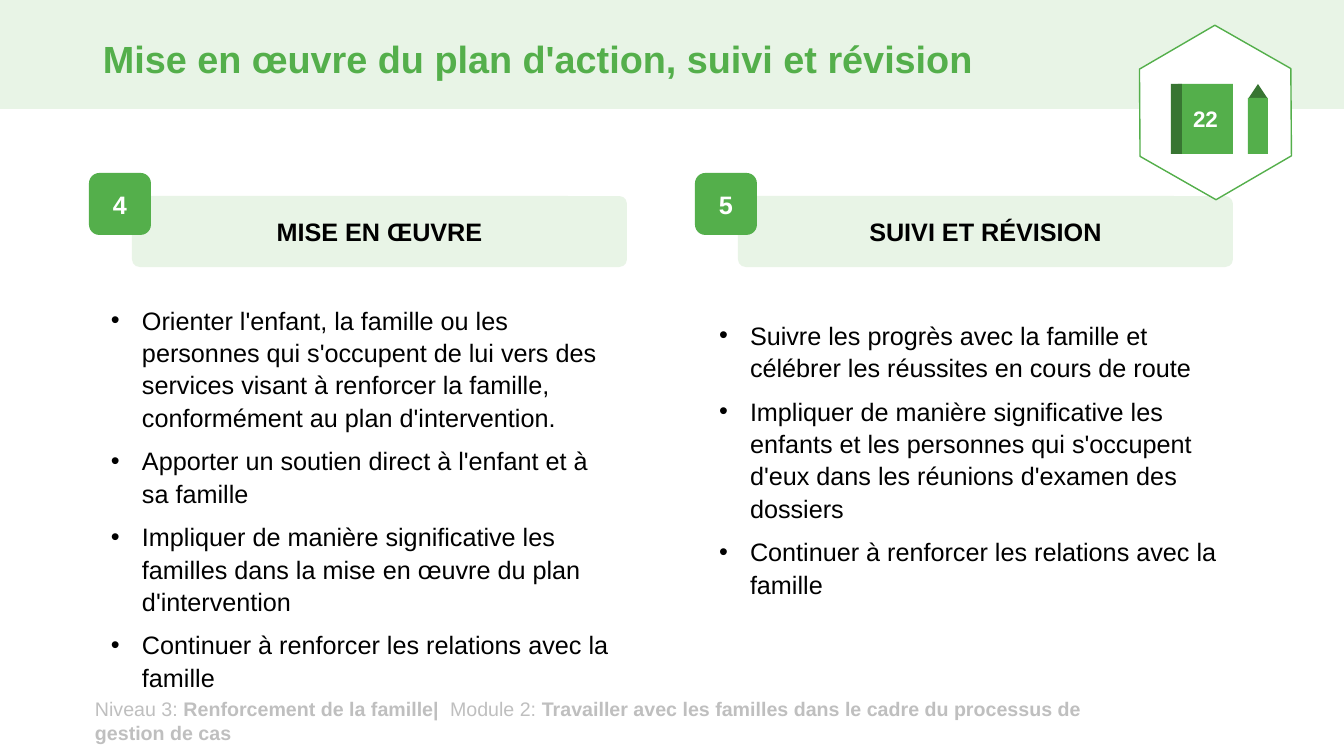
from dataclasses import dataclass

from pptx import Presentation
from pptx.dml.color import RGBColor
from pptx.enum.shapes import MSO_SHAPE
from pptx.enum.text import MSO_ANCHOR, MSO_AUTO_SIZE, PP_ALIGN
from pptx.shapes.autoshape import Shape
from pptx.slide import Slide
from pptx.text.text import TextFrame, _Paragraph
from pptx.util import Emu, Pt

EMU_PER_PX = 914400 / 100.8


@dataclass(frozen=True)
class Theme:
    font: str = "Arial"
    green: str = "54AF4B"
    dark_green: str = "387532"
    pale_green: str = "E8F4E6"
    white: str = "FFFFFF"
    black: str = "000000"
    grey: str = "BFBFBF"
    title_pt: int = 27
    text_pt: int = 18
    page_pt: int = 16
    footer_pt: int = 14


@dataclass(frozen=True)
class Box:
    left: int
    top: int
    width: int
    height: int


@dataclass(frozen=True)
class Step:
    number: str
    heading: str
    left: int
    body: Box
    points: tuple[str, ...]


@dataclass(frozen=True)
class IconPart:
    kind: MSO_SHAPE
    box: Box
    fill: str
    label: str = ""


THEME = Theme()
TITLE = "Mise en œuvre du plan d'action, suivi et révision"
FOOTER = (
    ("Niveau 3: ", False),
    ("Renforcement de la famille|  ", True),
    ("Module 2: ", False),
    ("Travailler avec les familles dans le cadre du processus de gestion de cas", True),
)
STEPS = (
    Step("4", "MISE EN ŒUVRE", 89, Box(101, 298, 525, 336), (
        "Orienter l'enfant, la famille ou les personnes qui s'occupent de lui vers des "
        "services visant à renforcer la famille, conformément au plan d'intervention.",
        "Apporter un soutien direct à l'enfant et à sa famille",
        "Impliquer de manière significative les familles dans la mise en œuvre du plan "
        "d'intervention",
        "Continuer à renforcer les relations avec la famille",
    )),
    Step("5", "SUIVI ET RÉVISION", 695, Box(709, 313, 525, 227), (
        "Suivre les progrès avec la famille et célébrer les réussites en cours de route",
        "Impliquer de manière significative les enfants et les personnes qui s'occupent "
        "d'eux dans les réunions d'examen des dossiers",
        "Continuer à renforcer les relations avec la famille",
    )),
)
NOTEBOOK_ICON = (
    IconPart(MSO_SHAPE.RECTANGLE, Box(1178, 84, 55, 70), THEME.green, "22"),
    IconPart(MSO_SHAPE.RECTANGLE, Box(1171, 84, 11, 70), THEME.dark_green),
    IconPart(MSO_SHAPE.ISOSCELES_TRIANGLE, Box(1248, 84, 20, 15), THEME.dark_green),
    IconPart(MSO_SHAPE.RECTANGLE, Box(1248, 98, 20, 56), THEME.green),
)


def px(value: int) -> Emu:
    return Emu(round(value * EMU_PER_PX))


def place(sp: Shape, box: Box) -> None:
    sp.left, sp.top = px(box.left), px(box.top)
    sp.width, sp.height = px(box.width), px(box.height)


def set_frame(tf: TextFrame, anchor: MSO_ANCHOR, fit: MSO_AUTO_SIZE) -> None:
    tf.word_wrap = True
    tf.auto_size = fit
    tf.vertical_anchor = anchor
    tf.margin_left = tf.margin_right = px(10)
    tf.margin_top = tf.margin_bottom = px(5)


def add_run(p: _Paragraph, text: str, size: int, color: str, bold: bool = False) -> None:
    r = p.add_run()
    r.text = text
    r.font.name = THEME.font
    r.font.size = Pt(size)
    r.font.bold = bold
    r.font.color.rgb = RGBColor.from_string(color)


def add_block(s: Slide, kind: MSO_SHAPE, box: Box, fill: str) -> Shape:
    """Add a plain filled shape without line or shadow."""
    sp = s.shapes.add_shape(
        kind, px(box.left), px(box.top), px(box.width), px(box.height))
    sp.shadow.inherit = False
    sp.fill.solid()
    sp.fill.fore_color.rgb = RGBColor.from_string(fill)
    sp.line.fill.background()
    return sp


def add_label(sp: Shape, text: str, size: int, color: str) -> None:
    """Write one bold centred line in a shape."""
    set_frame(sp.text_frame, MSO_ANCHOR.MIDDLE, MSO_AUTO_SIZE.NONE)
    p = sp.text_frame.paragraphs[0]
    p.alignment = PP_ALIGN.CENTER
    add_run(p, text, size, color, bold=True)


def add_header(s: Slide) -> None:
    band = add_block(s, MSO_SHAPE.RECTANGLE, Box(0, 0, 1344, 109), THEME.pale_green)
    s.shapes._spTree.insert(2, band._element)  # behind the title
    title = s.shapes.title
    place(title, Box(93, 13, 1159, 96))
    set_frame(title.text_frame, MSO_ANCHOR.MIDDLE, MSO_AUTO_SIZE.NONE)
    p = title.text_frame.paragraphs[0]
    p.alignment = PP_ALIGN.LEFT
    p.line_spacing = 0.9
    add_run(p, TITLE, THEME.title_pt, THEME.green, bold=True)


def add_footer(s: Slide) -> None:
    sp = s.shapes.add_textbox(px(85), px(692), px(1070), px(57))
    set_frame(sp.text_frame, MSO_ANCHOR.TOP, MSO_AUTO_SIZE.SHAPE_TO_FIT_TEXT)
    for text, bold in FOOTER:
        add_run(sp.text_frame.paragraphs[0], text, THEME.footer_pt, THEME.grey, bold)


def fill_points(body: Shape, step: Step) -> None:
    place(body, step.body)
    tf = body.text_frame
    set_frame(tf, MSO_ANCHOR.TOP, MSO_AUTO_SIZE.SHAPE_TO_FIT_TEXT)
    for i, point in enumerate(step.points):
        p = tf.add_paragraph() if i else tf.paragraphs[0]
        p.line_spacing = 1.07
        p.space_before, p.space_after = Pt(0), Pt(8)
        pPr = p._p.get_or_add_pPr()
        pPr.set("marL", str(px(31)))
        pPr.set("indent", str(px(-31)))
        add_run(p, point, THEME.text_pt, THEME.black)


def add_step(s: Slide, step: Step, body: Shape) -> None:
    fill_points(body, step)
    bar = add_block(s, MSO_SHAPE.ROUNDED_RECTANGLE,
                    Box(step.left + 43, 196, 495, 71), THEME.pale_green)
    bar.adjustments[0] = 0.11
    add_label(bar, step.heading, THEME.text_pt, THEME.black)
    badge = add_block(s, MSO_SHAPE.ROUNDED_RECTANGLE,
                      Box(step.left, 173, 62, 62), THEME.green)
    add_label(badge, step.number, THEME.text_pt, THEME.white)


def add_page_icon(s: Slide) -> None:
    hexagon = add_block(s, MSO_SHAPE.HEXAGON, Box(1128, 37, 175, 151), THEME.white)
    hexagon.adjustments[0] = 0.29
    hexagon.rotation = 29.7
    hexagon.line.color.rgb = RGBColor.from_string(THEME.green)
    hexagon.line.width = Pt(1)
    for part in NOTEBOOK_ICON:
        sp = add_block(s, part.kind, part.box, part.fill)
        if part.label:
            add_label(sp, part.label, THEME.page_pt, THEME.white)
            sp.text_frame.word_wrap = False


def main() -> None:
    prs = Presentation()
    prs.slide_width, prs.slide_height = px(1344), px(756)
    s = prs.slides.add_slide(prs.slide_layouts.get_by_name("Two Content"))
    add_header(s)
    add_footer(s)
    _, *bodies = list(s.placeholders)
    for step, body in zip(STEPS, bodies):
        add_step(s, step, body)
    add_page_icon(s)
    prs.save("out.pptx")


if __name__ == "__main__":
    main()
